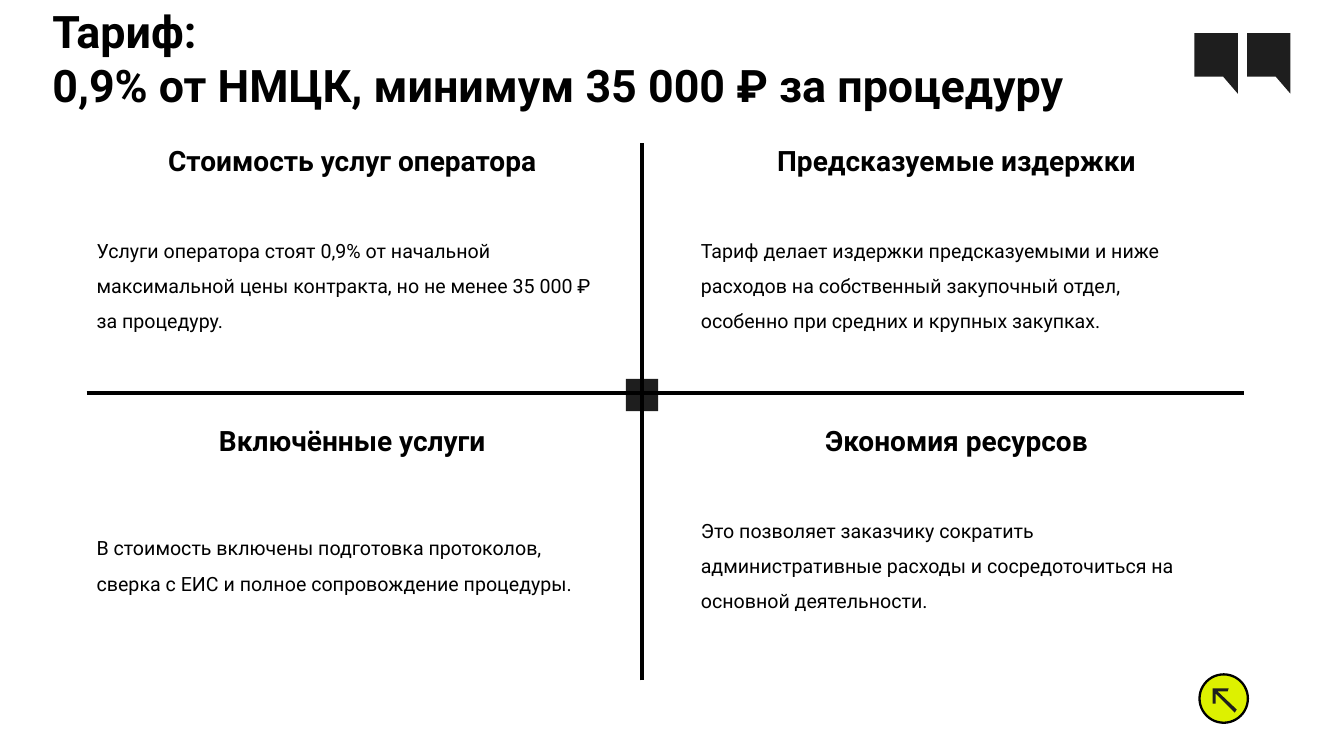
from dataclasses import dataclass

from lxml.etree import SubElement
from pptx import Presentation
from pptx.dml.color import RGBColor
from pptx.enum.shapes import MSO_CONNECTOR, MSO_SHAPE
from pptx.enum.text import MSO_ANCHOR, MSO_AUTO_SIZE, PP_ALIGN
from pptx.oxml.ns import qn
from pptx.util import Pt


@dataclass(frozen=True)
class Theme:
    font: str = "Roboto"
    ink: RGBColor = RGBColor(0, 0, 0)
    dark: RGBColor = RGBColor(0x1E, 0x1E, 0x1E)
    accent: RGBColor = RGBColor(0xDD, 0xF1, 0x00)
    title_size: float = 32
    heading_size: float = 20
    body_size: float = 14
    axis_width: float = 2.5
    ring_width: float = 1.65


THEME = Theme()

TITLE = ["Тариф:", "0,9% от НМЦК, минимум 35 000 ₽ за процедуру"]

# Rows of (heading, body) pairs, left to right
QUADRANTS = [
    [
        ("Стоимость услуг оператора",
         "Услуги оператора стоят 0,9% от начальной максимальной цены "
         "контракта, но не менее 35 000 ₽ за процедуру."),
        ("Предсказуемые издержки",
         "Тариф делает издержки предсказуемыми и ниже расходов на собственный "
         "закупочный отдел, особенно при средних и крупных закупках."),
    ],
    [
        ("Включённые услуги",
         "В стоимость включены подготовка протоколов, сверка с ЕИС "
         "и полное сопровождение процедуры."),
        ("Экономия ресурсов",
         "Это позволяет заказчику сократить административные расходы "
         "и сосредоточиться на основной деятельности."),
    ],
]
COLUMN_STEP, ROW_STEP = 431.6, 200.16

QUOTE_MARK = [(31, 0), (0, 0), (0, 31), (20.5, 31), (31, 43.2)]
ARROW = [(0, 0), (0, 10.8), (2.16, 10.8), (2.16, 3.6), (15.84, 17.28),
         (17.28, 15.12), (3.6, 2.16), (10.8, 2.16), (11.5, 0)]


def fill_text(box, lines, size, bold=False, align=PP_ALIGN.LEFT, spacing=1.0):
    frame = box.text_frame
    frame_format = {"word_wrap": True, "auto_size": MSO_AUTO_SIZE.NONE,
                    "vertical_anchor": MSO_ANCHOR.MIDDLE}
    for name, value in frame_format.items():
        setattr(frame, name, value)
    for index, line in enumerate(lines):
        para = frame.add_paragraph() if index else frame.paragraphs[0]
        para.alignment, para.line_spacing = align, spacing
        span = para.add_run()
        span.text = line
        span_format = {"name": THEME.font, "size": Pt(size), "bold": bold}
        for name, value in span_format.items():
            setattr(span.font, name, value)
        span.font.color.rgb = THEME.ink


def add_title(page, left, top, width, height):
    title = page.shapes.title
    place = {"left": left, "top": top, "width": width, "height": height}
    for name, value in place.items():
        setattr(title, name, Pt(value))
    fill_text(title, TITLE, THEME.title_size, bold=True)


def add_text(page, left, top, width, height, text, size, **style):
    box = page.shapes.add_textbox(Pt(left), Pt(top), Pt(width), Pt(height))
    fill_text(box, [text], size, **style)


def paint(shape, fill, line=None, width=0):
    shape.shadow.inherit = False
    shape.fill.solid()
    shape.fill.fore_color.rgb = fill
    if line is None:
        shape.line.fill.background()
    else:
        shape.line.color.rgb = line
        shape.line.width = Pt(width)


def add_preset(page, kind, left, top, side, *colours):
    shape = page.shapes.add_shape(kind, Pt(left), Pt(top), Pt(side), Pt(side))
    paint(shape, *colours)


def add_outline(page, left, top, points, fill):
    start, *rest = [(Pt(left + x), Pt(top + y)) for x, y in points]
    builder = page.shapes.build_freeform(*start)
    builder.add_line_segments(rest, close=True)
    paint(builder.convert_to_shape(), fill)


def add_axis(page, *ends):
    axis = page.shapes.add_connector(MSO_CONNECTOR.STRAIGHT, *map(Pt, ends))
    axis.line.color.rgb = THEME.ink
    axis.line.width = Pt(THEME.axis_width)
    SubElement(axis.line._get_or_add_ln().getparent(), qn("a:effectLst"))


def main():
    deck = Presentation()
    deck.slide_width, deck.slide_height = Pt(960), Pt(540)
    page = deck.slides.add_slide(deck.slide_layouts[5])

    # Title and quote marks
    add_title(page, 30.24, -1.44, 792, 84.96)
    for left in (853.2, 890.75):
        add_outline(page, left, 23.76, QUOTE_MARK, THEME.dark)

    # Round arrow badge
    add_preset(page, MSO_SHAPE.OVAL, 856.8, 481.68, 34.56,
               THEME.accent, THEME.ink, THEME.ring_width)
    add_outline(page, 866.16, 491.76, ARROW, THEME.dark)

    # Cross with its central square
    add_preset(page, MSO_SHAPE.RECTANGLE, 447.12, 270.72, 23.04, THEME.dark)
    add_axis(page, 61.92, 280.8, 888.48, 280.8)
    add_axis(page, 458.64, 486, 458.64, 102.24)

    # Four quadrants
    for row, cells in enumerate(QUADRANTS):
        for column, (heading, body) in enumerate(cells):
            left, top = 61.92 + column * COLUMN_STEP, 98.64 + row * ROW_STEP
            add_text(page, left + 34.56, top, 310.32, 31.68, heading,
                     THEME.heading_size, bold=True, align=PP_ALIGN.CENTER)
            add_text(page, left, top + 35.28, 380.16, 131.76, body,
                     THEME.body_size, spacing=1.5)

    deck.save("out.pptx")


if __name__ == "__main__":
    main()
